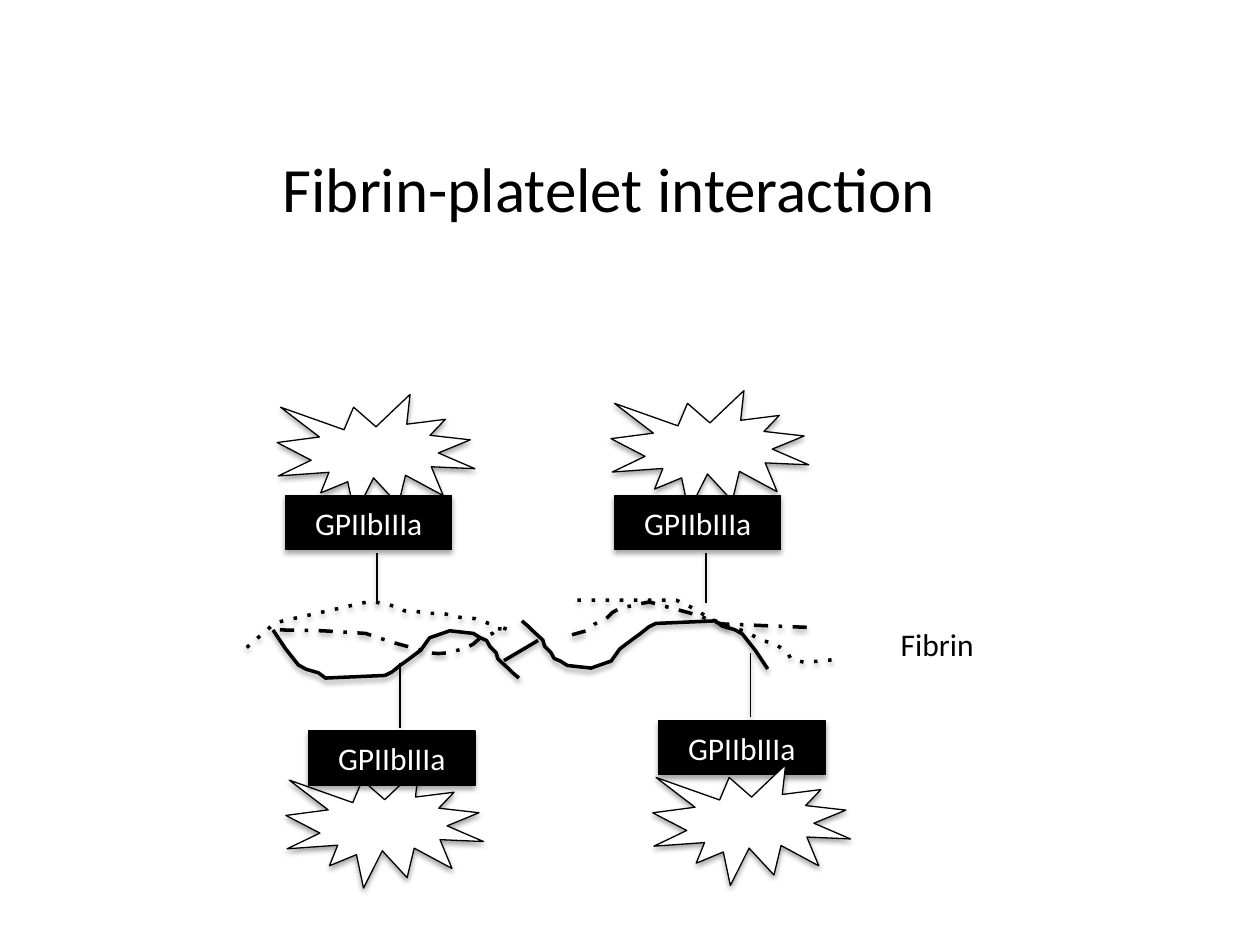
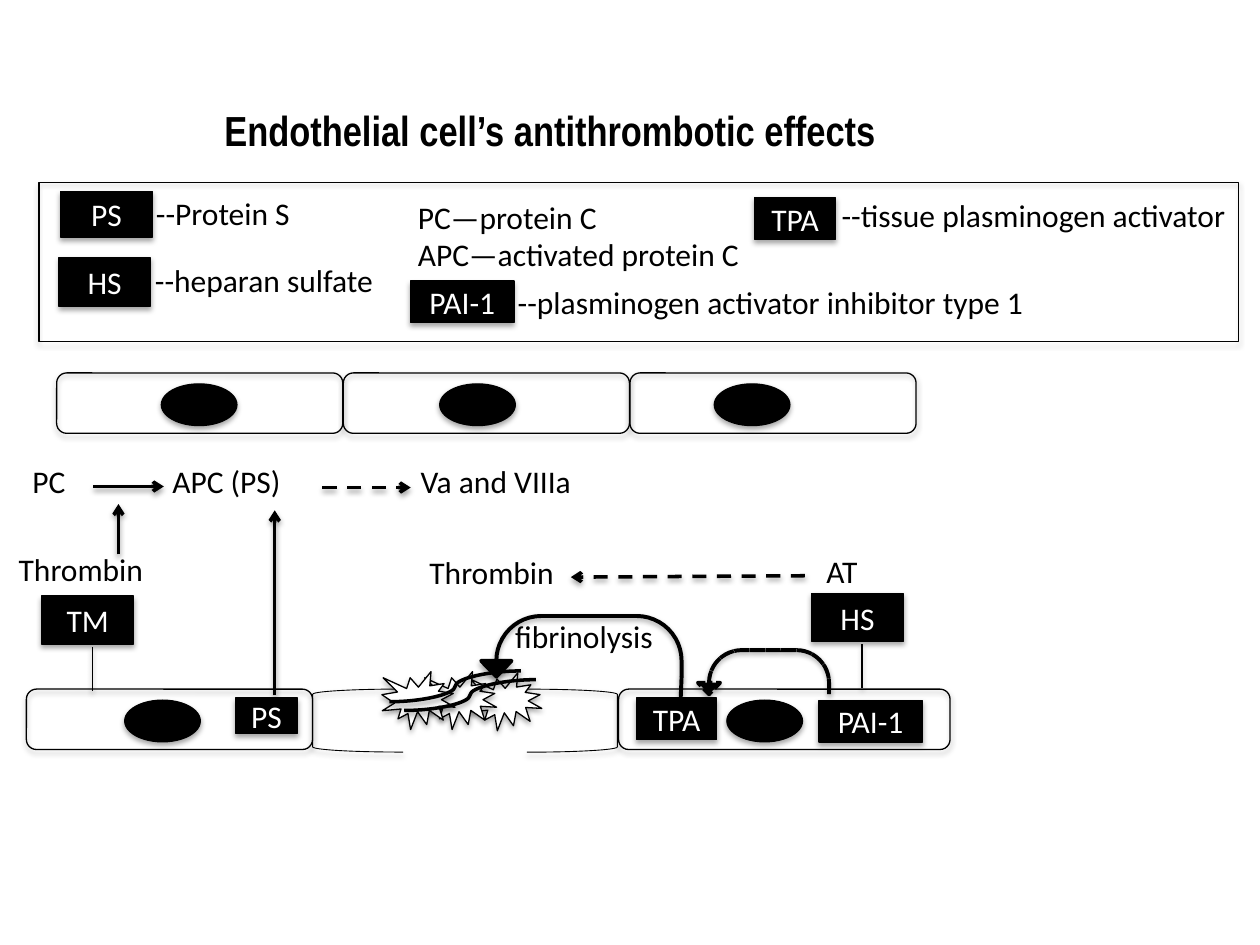
from dataclasses import dataclass
from lxml.etree import SubElement
from pptx import Presentation
from pptx.dml.color import RGBColor
from pptx.enum.shapes import MSO_CONNECTOR, MSO_SHAPE
from pptx.enum.text import MSO_ANCHOR, MSO_AUTO_SIZE, PP_ALIGN
from pptx.oxml.ns import qn
from pptx.util import Pt


@dataclass(frozen=True)
class Theme:
    """Colours, fonts, type sizes and line widths of the deck."""
    ink: RGBColor = RGBColor(0, 0, 0)
    paper: RGBColor = RGBColor(255, 255, 255)
    font: str = "Calibri"
    heading_font: str = "Arial Narrow"
    title: float = 36
    heading: float = 24
    body: float = 18
    hairline: float = 0.5
    thin: float = 0.75
    strong: float = 2
    bold_arrow: float = 2.25


THEME = Theme()
HANGING = (1.06, 0.55, 1.98, 0.55)
STANDING = (-0.06, 0.55, -1.25, 0.55)
UTURN = (0, 0.25, 0.26, 0.74, 1)

UPPER_DOTS = [
    (141, 370), (156, 357), (161, 355), (212, 343.5), (219, 345), (228, 347),
    (231, 349), (236, 349), (244, 350.5), (253, 350.5), (264, 353),
    (271.5, 353.5), (280, 356.5), (283, 359), (291, 360), (285, 358)]
LEFT_DASHES = [
    (160, 360), (184.5, 360.5), (209, 362), (222.5, 366.5), (227.5, 368),
    (240.5, 371.5), (244, 373), (250.5, 373.5), (257, 373), (267, 370),
    (270.5, 368), (274.5, 364.5), (281.5, 362), (286, 357)]
LEFT_STRAND = [
    (156, 360), (163, 370.5), (170.5, 380), (175, 382.5), (182, 384.5),
    (186, 387.5), (220, 386), (224, 384), (229, 380), (232.5, 377.5),
    (240.5, 371.5), (245.5, 364.5), (257, 360.5), (270.5, 362),
    (274.5, 364.5), (278, 366), (280, 369.5), (283.5, 373), (284.5, 376.5),
    (291, 382.5), (293, 384.5), (296.5, 387.5)]
RIGHT_STRAND = [(594.7 - x, 742.3 - y) for x, y in LEFT_STRAND]
RIGHT_DASHES = [
    (461, 358.5), (436, 357.5), (412, 356.5), (398, 351.5), (393, 350),
    (380, 346.5), (376.5, 345.5), (371, 344), (363.5, 345.5), (353.5, 348),
    (350, 350), (346.5, 353.5), (340, 356.5), (335, 360.5), (324, 363.5)]
RIGHT_DOTS = [
    (330, 343), (386.5, 343), (394, 346.5), (402.5, 351.5), (404.5, 353.5),
    (409.5, 355), (413, 356.5), (417, 358.5), (425, 360.5), (435.5, 366),
    (443, 368), (450, 373), (452, 376.5), (459.5, 378.5), (472.5, 377.5),
    (479, 376.5)]


def write(tf, text, size=THEME.body, font=THEME.font, color=THEME.ink,
          bold=False, align=PP_ALIGN.LEFT, anchor=MSO_ANCHOR.TOP):
    """Fill a text frame, one paragraph per line of text."""
    tf.word_wrap = True
    tf.vertical_anchor = anchor
    for i, line in enumerate(text.split("\n")):
        p = tf.paragraphs[0] if i == 0 else tf.add_paragraph()
        p.alignment = align
        r = p.add_run()
        r.text = line
        r.font.name, r.font.size, r.font.bold = font, Pt(size), bold
        r.font.color.rgb = color


def stroke(sp, width, dash=None, arrow=False):
    """Give a shape or connector its line and soft drop shadow."""
    sp.line.color.rgb = THEME.ink
    sp.line.width = Pt(width)
    props = sp.element.spPr
    ln = props.find(qn("a:ln"))
    if dash:
        SubElement(ln, qn("a:prstDash"), val=dash)
    if arrow:
        SubElement(ln, qn("a:tailEnd"), type="arrow")
    effects = SubElement(props, qn("a:effectLst"))
    shadow = SubElement(effects, qn("a:outerShdw"), blurRad=str(Pt(3.1)),
                        dist=str(Pt(1.8)), dir="5400000", rotWithShape="0")
    color = SubElement(shadow, qn("a:srgbClr"), val=str(THEME.ink))
    SubElement(color, qn("a:alpha"), val="35000")


def title(s, text, x, y, w, h, **fmt):
    """Place and fill the title placeholder."""
    sp = s.shapes.title
    sp.left, sp.top, sp.width, sp.height = map(Pt, (x, y, w, h))
    sp.text_frame.auto_size = MSO_AUTO_SIZE.NONE
    write(sp.text_frame, text, **fmt)


def label(s, text, x, y, w, h=29):
    """Add a plain text box."""
    tf = s.shapes.add_textbox(*map(Pt, (x, y, w, h))).text_frame
    write(tf, text)
    tf.auto_size = MSO_AUTO_SIZE.SHAPE_TO_FIT_TEXT


def shape(s, kind, x, y, w, h, fill=None, adjust=(), width=THEME.thin,
          dash=None):
    """Add an outlined preset shape."""
    sp = s.shapes.add_shape(kind, *map(Pt, (x, y, w, h)))
    for i, value in enumerate(adjust):
        sp.adjustments[i] = value
    if fill is None:
        sp.fill.background()
    else:
        sp.fill.solid()
        sp.fill.fore_color.rgb = fill
    stroke(sp, width, dash)
    return sp


def tag(s, text, x, y, w, h, pointer=None):
    """Add a black name box, with a callout line if a pointer is given."""
    kind = MSO_SHAPE.LINE_CALLOUT_1 if pointer else MSO_SHAPE.RECTANGLE
    sp = shape(s, kind, x, y, w, h, THEME.ink, pointer or ())
    write(sp.text_frame, text, color=THEME.paper, align=PP_ALIGN.CENTER,
          anchor=MSO_ANCHOR.MIDDLE)


def platelet(s, x, y, w=113, h=69):
    """Add a star-shaped platelet."""
    shape(s, MSO_SHAPE.EXPLOSION1, x, y, w, h, THEME.paper)


def strand(s, points, dash=None):
    """Draw a fibrin strand through points."""
    start, *rest = [(Pt(x), Pt(y)) for x, y in points]
    builder = s.shapes.build_freeform(*start, scale=1.0)
    builder.add_line_segments(rest, close=False)
    sp = builder.convert_to_shape()
    sp.fill.background()
    stroke(sp, THEME.strong, dash)


def line(s, x1, y1, x2, y2, kind=MSO_CONNECTOR.STRAIGHT, width=THEME.strong,
         dash=None, arrow=False):
    """Add a connector between two points."""
    c = s.shapes.add_connector(kind, *map(Pt, (x1, y1, x2, y2)))
    stroke(c, width, dash, arrow)


def cell(s, x, y, nucleus, w=163.5):
    """Add an endothelial cell with its nucleus at the given left edge."""
    shape(s, MSO_SHAPE.ROUNDED_RECTANGLE, x, y, w, 34.5)
    shape(s, MSO_SHAPE.OVAL, nucleus, y + 6.3, 43.2, 23.8, THEME.ink)


def uturn(s, x, y, w, h, dash=None):
    """Add a U-turn arrow that runs from right to left."""
    sp = shape(s, MSO_SHAPE.U_TURN_ARROW, x, y, w, h, THEME.ink, UTURN,
               THEME.bold_arrow, dash)
    sp.element.spPr.find(qn("a:xfrm")).set("flipH", "1")


def fibrin_slide(s):
    """Build the fibrin and platelet diagram."""
    title(s, "Fibrin-platelet interaction", 12, 75.6, 672, 63.4,
          size=THEME.title, align=PP_ALIGN.CENTER, anchor=MSO_ANCHOR.MIDDLE)
    for points, dash in (
            (UPPER_DOTS, "dot"), (LEFT_DASHES, "dashDot"),
            (LEFT_STRAND, None), (RIGHT_STRAND, None),
            (RIGHT_DASHES, "dashDot"), (RIGHT_DOTS, "dot")):
        strand(s, points, dash)
    line(s, 288, 377.5, 307.5, 366)
    label(s, "Fibrin", 507.6, 353.5, 106)
    for x, y in ((158.4, 225.4), (349.2, 223.2), (163.4, 438.5)):
        platelet(s, x, y)
    for x, y, pointer in (
            (163.2, 283.2, HANGING), (351.2, 283.2, HANGING),
            (176.4, 417.8, STANDING), (376.4, 411.8, STANDING)):
        tag(s, "GPIIbIIIa", x, y, 95, 31, pointer)
    platelet(s, 373, 437)


def legend(s):
    """Build the framed list of abbreviations."""
    shape(s, MSO_SHAPE.RECTANGLE, 22.3, 104.4, 685.4, 90.7)
    tag(s, "PS", 34.6, 109.4, 52.6, 26)
    tag(s, "HS", 33.8, 147, 52, 28)
    tag(s, "TPA", 431.3, 113, 46, 23.8)
    tag(s, "PAI-1", 234.7, 160.6, 59, 23.8)
    label(s, "--Protein S", 82, 107.3, 106)
    label(s, "--heparan sulfate", 81.4, 145.4, 157)
    label(s, "PC—protein C\nAPC—activated protein C", 231.8, 109.4, 222, 51)
    label(s, "--tissue plasminogen activator", 473.8, 108.7, 246)
    label(s, "--plasminogen activator inhibitor type 1", 288.7, 158.4, 383)


def vessel_wall(s):
    """Build both rows of cells and the clot in the gap."""
    for i, nucleus in enumerate((92.2, 251.3, 408.2)):
        cell(s, 32.4 + 163.8 * i, 213.1, nucleus)
    cell(s, 15.1, 393.8, 71.3)
    cell(s, 353.5, 393.8, 415.4, w=189.4)
    for x, angle in ((178.6, 0), (301, 180)):
        sp = shape(s, MSO_SHAPE.LEFT_BRACKET, x, 393.8, 51.8, 36,
                   width=THEME.hairline)
        sp.rotation = angle
    for x, y in ((267.8, 384.5), (241.9, 383.8), (218.2, 383.8)):
        platelet(s, x, y, 41.8, 33.1)
    for x, y in ((222.5, 401), (231, 406)):
        line(s, x, y, x + 75.2, y - 17.6, kind=MSO_CONNECTOR.CURVE)


def pathways(s):
    """Build the factors and the arrows between them."""
    tag(s, "TM", 23.8, 340.6, 52.6, 27.4, HANGING)
    tag(s, "HS", 463.7, 339.1, 52.6, 27.4, HANGING)
    tag(s, "PS", 134.6, 398.9, 35.3, 20.2)
    tag(s, "TPA", 363.6, 398.9, 46, 23.8)
    tag(s, "PAI-1", 468, 400.3, 59, 23.8)
    for text, x, y, w in (
            ("PC", 11.5, 260.6, 97), ("APC (PS)", 91.4, 260.6, 104),
            ("Va and VIIIa", 233.3, 260.6, 140),
            ("Thrombin", 3.6, 311, 102), ("Thrombin", 238.3, 312.5, 97),
            ("AT", 465.1, 311.8, 39)):
        label(s, text, x, y, w)
    for x1, y1, x2, y2, dash in (
            (67.7, 316.8, 67.7, 288, None), (53.3, 278, 93.6, 278, None),
            (157, 397.4, 157, 291.6, None),
            (184.3, 278.6, 234.7, 278.6, "dash"),
            (460, 329, 326.2, 329.8, "dash")):
        line(s, x1, y1, x2, y2, dash=dash, arrow=True)
    uturn(s, 275, 352, 114.5, 34.6)
    line(s, 389.5, 386.6, 389, 398.2, width=THEME.bold_arrow)
    label(s, "fibrinolysis", 287.3, 349.2, 111)
    uturn(s, 398.9, 371.5, 74.9, 25.2, "sysDash")


def endothelium_slide(s):
    """Build the endothelial cell diagram."""
    title(s, "Endothelial cell’s antithrombotic effects", 121, 56.2, 579.6,
          63.4, size=THEME.heading, font=THEME.heading_font, bold=True)
    legend(s)
    vessel_wall(s)
    pathways(s)


def main():
    """Build and save the deck."""
    prs = Presentation()
    prs.slide_width, prs.slide_height = Pt(720), Pt(540)
    for build in (fibrin_slide, endothelium_slide):
        build(prs.slides.add_slide(prs.slide_layouts[5]))
    prs.save("out.pptx")


if __name__ == "__main__":
    main()
